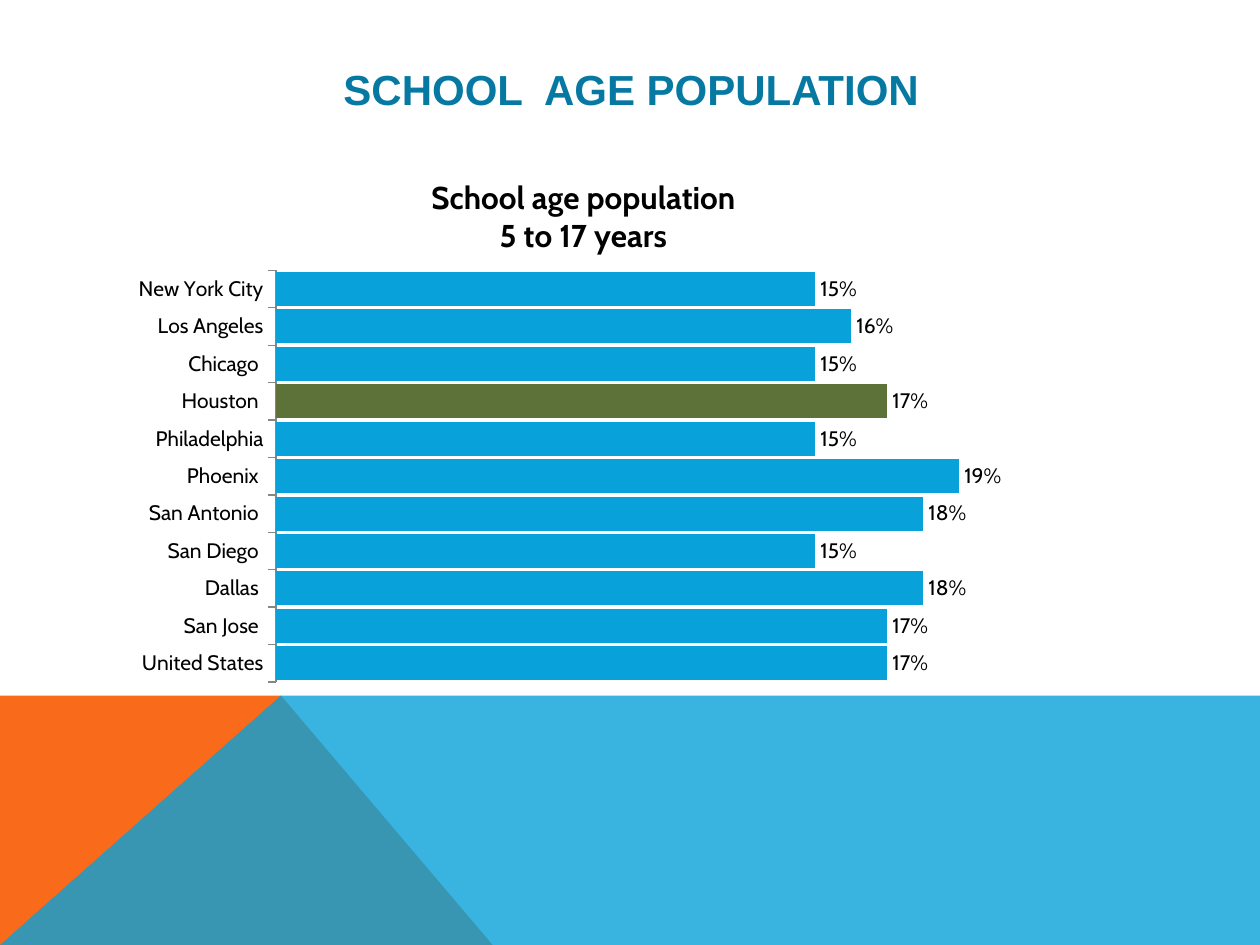
from dataclasses import dataclass

from lxml import etree
from pptx import Presentation
from pptx.chart.data import CategoryChartData
from pptx.dml.color import RGBColor
from pptx.enum import chart as ch, text
from pptx.oxml import ns, parse_xml
from pptx.util import Inches, Pt


@dataclass(frozen=True)
class Theme:
    orange: str = "F96A1B"
    blue: str = "08A1D9"
    green: str = "5D7238"
    head: str = "0679A3"
    ink: str = "000000"
    axis: str = "868686"
    white: str = "FFFFFF"
    head_font: str = "Arial"
    body_font: str = "Cabin"
    head_size: int = 24
    chart_head: int = 18
    label: int = 12
    base: int = 10


THEME = Theme()

CITIES = [
    ("New York City", 0.15), ("Los Angeles", 0.16), ("Chicago ", 0.15),
    ("Houston ", 0.17), ("Philadelphia", 0.15), ("Phoenix ", 0.19),
    ("San Antonio ", 0.18), ("San Diego ", 0.15), ("Dallas ", 0.18),
    ("San Jose ", 0.17), ("United States", 0.17),
]
MARKED = 3  # Houston


def style(font, size, color, name, bold=False):
    font.size, font.name, font.bold = Pt(size), name, bold
    font.color.rgb = RGBColor.from_string(color)


def paint(fill, color, alpha=None):
    fill.solid()
    fill.fore_color.rgb = RGBColor.from_string(color)
    if alpha:
        clr = fill._xPr.find(".//" + ns.qn("a:srgbClr"))
        etree.SubElement(clr, ns.qn("a:alpha"), val=str(alpha * 1000))


def add_area(slide, points, color, alpha=None):
    spots = [(Inches(x), Inches(y)) for x, y in points]
    pen = slide.shapes.build_freeform(*spots[0])
    pen.add_line_segments(spots[1:], close=True)
    area = pen.convert_to_shape()
    area.shadow.inherit = False
    paint(area.fill, color, alpha)
    area.line.fill.background()


def set_title(slide, words):
    title = slide.shapes.title
    title.left, title.top = Inches(0.9), Inches(0.4)
    title.width, title.height = Inches(8.22), Inches(0.6)
    frame = title.text_frame
    frame.text = words
    frame.vertical_anchor = text.MSO_ANCHOR.MIDDLE
    par = frame.paragraphs[0]
    par.alignment = text.PP_ALIGN.CENTER
    style(par.font, THEME.head_size, THEME.head, THEME.head_font, True)


def layout_xml(**parts):
    """Manual chart layout, in fractions of the chart's size."""
    inner = '<c:layoutTarget val="inner"/>' if "w" in parts else ""
    modes = '<c:xMode val="edge"/><c:yMode val="edge"/>'
    sizes = "".join(f'<c:{k} val="{v}"/>' for k, v in parts.items())
    return parse_xml(
        f'<c:layout {ns.nsdecls("c")}><c:manualLayout>{inner}{modes}{sizes}'
        "</c:manualLayout></c:layout>")


def place(part, after, **parts):
    """Give a chart part its layout, behind its first `after` children."""
    for old in part.findall(ns.qn("c:layout")):
        part.remove(old)
    part.insert(after, layout_xml(**parts))


def add_bars(slide):
    data = CategoryChartData(number_format="0%")
    data.categories = [city for city, _ in CITIES]
    data.add_series("Series 1", [share for _, share in CITIES])
    chart = slide.shapes.add_chart(
        ch.XL_CHART_TYPE.BAR_CLUSTERED, Inches(0.9), Inches(1.2),
        Inches(8.6), Inches(4.3), data).chart
    style(chart.font, THEME.base, THEME.ink, THEME.body_font)
    chart.has_legend = False

    # Chart heading
    frame = chart.chart_title.text_frame
    frame.text = "School age population\n5 to 17 years"
    for par in frame.paragraphs:
        style(par.font, THEME.chart_head, THEME.ink, THEME.body_font, True)
    chart.chart_title.include_in_layout = False
    place(chart.chart_title._element, 1, x=0.29, y=0.04)

    # Axes
    cat, val = chart.category_axis, chart.value_axis
    cat.reverse_order = True
    cat.major_tick_mark = ch.XL_TICK_MARK.OUTSIDE
    cat.format.line.color.rgb = RGBColor.from_string(THEME.axis)
    style(cat.tick_labels.font, THEME.label, THEME.ink, THEME.body_font)
    val.minimum_scale, val.maximum_scale = 0, 0.25
    val.has_major_gridlines = False
    val.visible = False

    # Bars and their labels
    plot = chart.plots[0]
    plot.gap_width = 10
    plot.vary_by_categories = False
    bars = plot.series[0]
    paint(bars.format.fill, THEME.blue)
    paint(bars.points[MARKED].format.fill, THEME.green)
    labels = bars.data_labels
    labels.show_value = True
    labels.number_format, labels.number_format_is_linked = "0%", False
    labels.position = ch.XL_LABEL_POSITION.OUTSIDE_END
    style(labels.font, THEME.label, THEME.ink, THEME.body_font)
    place(chart._chartSpace.chart.plotArea, 0, x=0.15, y=0.22, w=0.83, h=0.76)


def main():
    deck = Presentation()
    deck.slide_width, deck.slide_height = Inches(10), Inches(7.5)
    slide = deck.slides.add_slide(deck.slide_layouts[5])
    paint(slide.background.fill, THEME.white)

    # Coloured foot
    low, top, peak = 7.5, 5.52, 2.23
    add_area(slide, [(0, low), (0, top), (peak, top), (3.91, low)],
             THEME.orange)
    add_area(slide, [(0, low), (peak, top), (10, top), (10, low)],
             THEME.blue, 80)

    set_title(slide, "SCHOOL  AGE POPULATION")
    add_bars(slide)
    deck.save("out.pptx")


if __name__ == "__main__":
    main()
